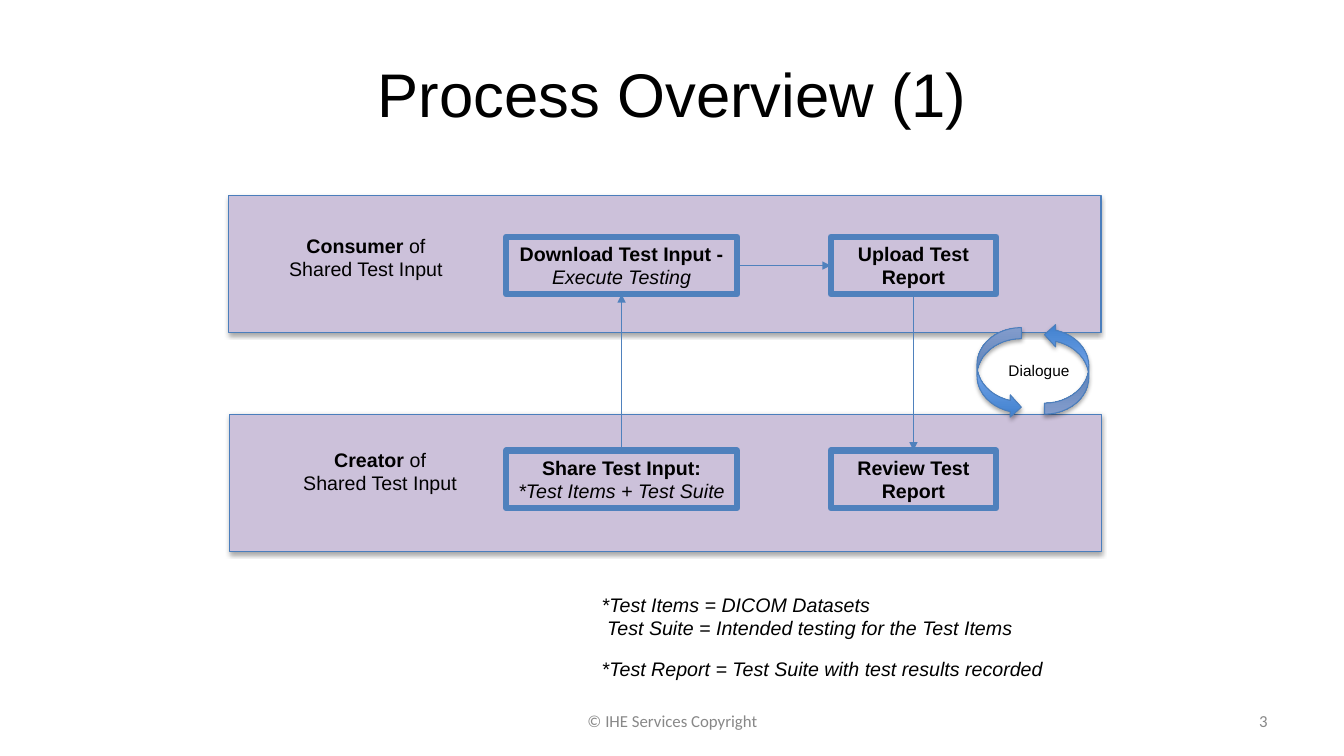
from pptx import Presentation
from pptx.dml.color import RGBColor
from pptx.enum.shapes import MSO_CONNECTOR as Link, MSO_SHAPE as Kind
from pptx.enum.text import MSO_ANCHOR as Anchor, PP_ALIGN as Align
from pptx.oxml import parse_xml
from pptx.oxml.ns import nsdecls, qn
from pptx.util import Pt

PX = 9144
BLUE, EDGE, LILAC = "4F81BD", "4B7EBC", "CCC1DA"
GREY, BLACK = "888888", "000000"


def px(*nums):
    return [n * PX for n in nums]


def color(code):
    return RGBColor.from_string(code)


def write(shape, paras, size=14, font="Arial", ink=BLACK,
          align=Align.CENTER, anchor=Anchor.TOP, wrap=True):
    frame = shape.text_frame
    frame.word_wrap = wrap
    frame.vertical_anchor = anchor
    for i, runs in enumerate(paras):
        para = frame.add_paragraph() if i else frame.paragraphs[0]
        para.alignment = align
        for text, style in runs:
            run = para.add_run()
            run.text = text
            run.font.name, run.font.size = font, Pt(size)
            run.font.bold, run.font.italic = "b" in style, "i" in style
            run.font.color.rgb = color(ink)


def label(slide, box, paras, **style):
    write(slide.shapes.add_textbox(*px(*box)), paras, **style)


def outline(shape, ink, width):
    shape.line.color.rgb = color(ink)
    shape.line.width = Pt(width)
    shape.shadow.inherit = False


def shade(shape):
    effects = shape._element.spPr.find(qn("a:effectLst"))
    effects.append(parse_xml(
        f'<a:outerShdw {nsdecls("a")} blurRad="40000" dist="23000" dir="5400000" '
        'rotWithShape="0"><a:srgbClr val="000000"><a:alpha val="35000"/>'
        '</a:srgbClr></a:outerShdw>'))


def step(slide, box, paras):
    shape = slide.shapes.add_shape(Kind.RECTANGLE, *px(*box))
    shape.fill.background()
    outline(shape, BLUE, 4.5)
    write(shape, paras)
    return shape


def lane(slide, box, role, inset, top, first, last):
    left, y, wide, high = box
    band = slide.shapes.add_shape(Kind.RECTANGLE, *px(*box))
    band.fill.solid()
    band.fill.fore_color.rgb = color(LILAC)
    outline(band, EDGE, 0.75)
    shade(band)
    label(slide, (left + inset, y + top - 8, 176, 57),
          [[(role, "b"), (" of", "")], [("Shared Test Input", "")]], wrap=False)
    return (step(slide, (502, y + top, 229, 57), first),
            step(slide, (824, y + top, 164, 57), last))


def arrow(slide, start, side, end, goal):
    line = slide.shapes.add_connector(Link.STRAIGHT, 0, 0, 0, 0)
    line.begin_connect(start, side)
    line.end_connect(end, goal)
    line.line.color.rgb = color(BLUE)
    line.line.width = Pt(1)
    line.line._get_or_add_ln().append(
        parse_xml(f'<a:tailEnd {nsdecls("a")} type="triangle"/>'))
    line._element.spPr.append(parse_xml(f'<a:effectLst {nsdecls("a")}/>'))


def curve(slide, box, flip):
    shape = slide.shapes.add_shape(Kind.CURVED_LEFT_ARROW, *px(*box))
    shape._element.spPr.find(qn("a:xfrm")).set(flip, "1")
    shape.fill.gradient()
    shape.fill.gradient_angle = 90
    for stop, ink in zip(shape.fill.gradient_stops, ("3F80CE", "A4C4FF")):
        stop.color.rgb = color(ink)
    outline(shape, EDGE, 0.75)
    shade(shape)


def talk(slide, box):
    x, y, wide, high = box
    label(slide, (x + 11, y + 32, 101, 29), [[("Dialogue", "")]], size=11)
    curve(slide, (x, y + 4, 44, 90), "flipH")
    curve(slide, (x + wide - 44, y, 44, 90), "flipV")


def notes(slide, box):
    x, y, wide, high = box
    label(slide, (x, y, wide, 57),
          [[("*Test Items = DICOM Datasets", "i")],
           [(" Test Suite = Intended testing for the Test Items", "i")]],
          align=Align.LEFT)
    label(slide, (x, y + 64, wide, 34),
          [[("*Test Report = Test Suite with test results recorded", "i")]],
          align=Align.LEFT)


def head(slide, box):
    title = slide.shapes.title
    title.left, title.top, title.width, title.height = px(*box)
    write(title, [[("Process Overview (1)", "")]], size=44, anchor=Anchor.MIDDLE)


def foot(slide, box):
    x, y, wide, high = box
    look = dict(size=12, font="Calibri", ink=GREY, anchor=Anchor.MIDDLE)
    label(slide, (x, y, 422, high), [[("© IHE Services Copyright", "")]], **look)
    label(slide, (x + wide - 311, y, 311, high), [[("3", "")]],
          align=Align.RIGHT, **look)


def main():
    deck = Presentation()
    deck.slide_width, deck.slide_height = px(1333, 750)
    slide = deck.slides.add_slide(deck.slide_layouts[5])
    head(slide, (217, 30, 900, 125))
    load, send = lane(
        slide, (227, 194, 865, 136), "Consumer", 48, 41,
        [[("Download Test Input - ", "b"), ("Execute Testing", "i")]],
        [[("Upload Test Report", "b")]])
    share, check = lane(
        slide, (228, 411, 865, 136), "Creator", 61, 36,
        [[("Share Test Input:", "b")], [("*Test Items + Test Suite", "i")]],
        [[("Review Test Report", "b")]])
    arrow(slide, share, 0, load, 2)
    arrow(slide, load, 3, send, 1)
    arrow(slide, send, 2, check, 0)
    talk(slide, (969, 321, 111, 94))
    notes(slide, (587, 583, 590, 98))
    foot(slide, (456, 695, 811, 40))
    deck.save("out.pptx")


if __name__ == "__main__":
    main()
